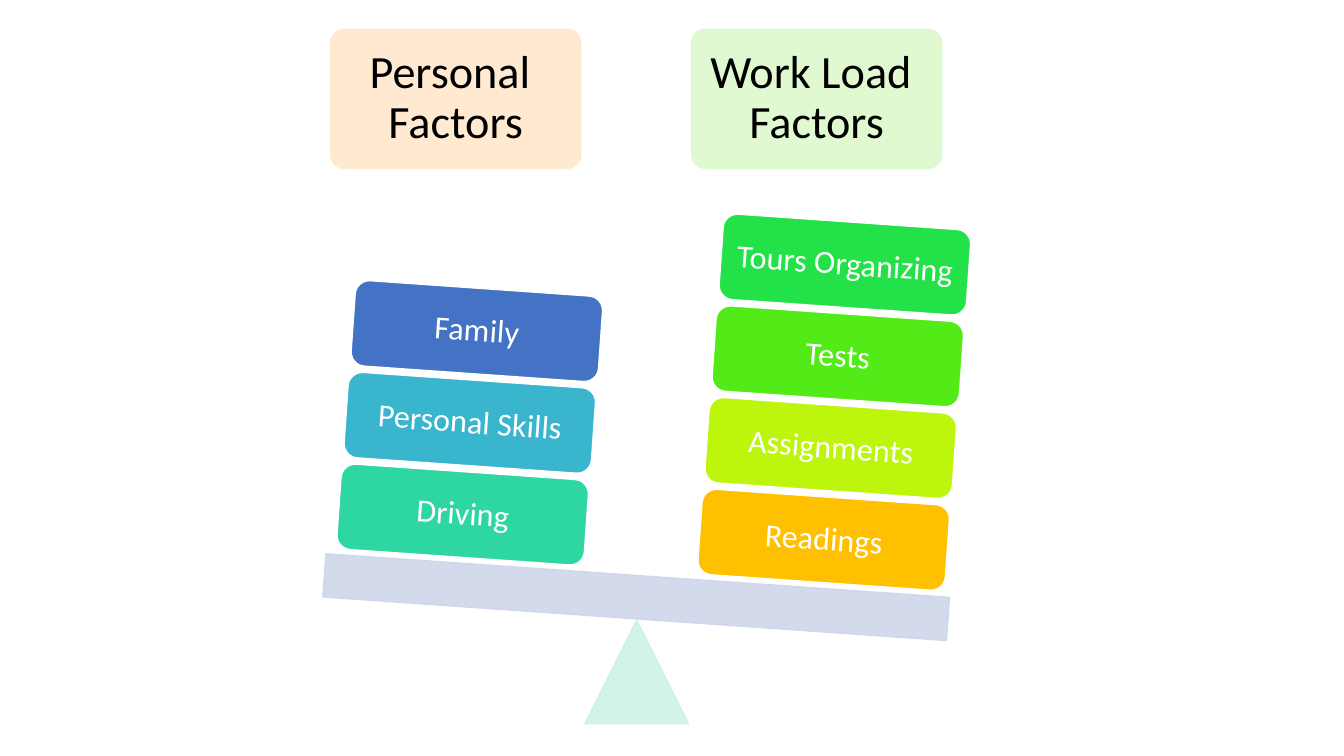
from lxml.etree import SubElement
from pptx import Presentation
from pptx.dml.color import RGBColor
from pptx.enum.shapes import MSO_SHAPE as Shape
from pptx.enum.text import MSO_ANCHOR as Anchor, PP_ALIGN as Align
from pptx.oxml.ns import qn
from pptx.util import Emu, Pt

EMU_PER_PX = 9144  # 100 px to the inch
TILT = 4
TILE_WIDTH, TILE_HEIGHT = 246, 85
TILE_PITCH, TILE_DRIFT = 91, 7

COLORS = {
    "peach": "FFE8CC",
    "pale_green": "DDF9CC",
    "mint": "CDF2E7",
    "lavender": "CFD6EA",
    "amber": "FFC000",
    "lime": "BEF50C",
    "leaf": "53EB17",
    "green": "23E148",
    "teal": "2ED7A1",
    "cyan": "39B6CE",
    "blue": "4472C4",
    "white": "FFFFFF",
    "black": "000000",
}


def px(length):
    return Emu(length * EMU_PER_PX)


def paint(fill, color, opacity):
    fill.solid()
    fill.fore_color.rgb = RGBColor.from_string(COLORS[color])
    if opacity < 100:
        for rgb in fill._xPr.iter(qn("a:srgbClr")):
            SubElement(rgb, qn("a:alpha"), val=str(opacity * 1000))


def add_box(page, kind, bounds, color, line_color, opacity=100, tilt=0):
    box = page.shapes.add_shape(kind, *map(px, bounds))
    box.shadow.inherit = False
    box.rotation = tilt
    paint(box.fill, color, opacity)
    box.line.width = Pt(1)
    paint(box.line.fill, line_color, opacity)
    return box


def write_label(box, text, size, color, inset):
    """Centre a right-to-left label in the box."""
    frame = box.text_frame
    frame.word_wrap = True
    frame.vertical_anchor = Anchor.MIDDLE
    frame.margin_left = frame.margin_right = px(inset)
    frame.margin_top = frame.margin_bottom = px(inset)
    para = frame.paragraphs[0]
    para.text = text
    para.alignment = Align.CENTER
    para.line_spacing = 0.9
    para._p.get_or_add_pPr().set("rtl", "1")
    font = para.runs[0].font
    font.name = "Calibri"
    font.size = Pt(size)
    font.color.rgb = RGBColor.from_string(COLORS[color])


def add_heading(page, left, text, color):
    box = add_box(page, Shape.ROUNDED_RECTANGLE, (left, 29, 248, 138),
                  color, color, opacity=90)
    box.adjustments[0] = 0.1
    write_label(box, text, 33, "black", inset=14)


def add_stack(page, left, top, tiles):
    """Pile tiles from the beam upwards, drifting right with the tilt."""
    for level, (text, color) in enumerate(tiles):
        bounds = (left + level * TILE_DRIFT, top - level * TILE_PITCH,
                  TILE_WIDTH, TILE_HEIGHT)
        box = add_box(page, Shape.ROUNDED_RECTANGLE, bounds, color, "white", tilt=TILT)
        write_label(box, text, 23, "white", inset=10)


def add_seesaw(page):
    add_box(page, Shape.ISOSCELES_TRIANGLE, (580, 615, 103, 103),
            "mint", "mint", opacity=90)
    add_box(page, Shape.RECTANGLE, (321, 571, 620, 43),
            "lavender", "lavender", opacity=90, tilt=TILT)


def main():
    deck = Presentation()
    deck.slide_width, deck.slide_height = px(1333), px(750)
    page = deck.slides.add_slide(deck.slide_layouts[6])

    add_heading(page, 328, " Personal Factors", "peach")
    add_heading(page, 686, " Work Load Factors", "pale_green")
    add_seesaw(page)
    add_stack(page, 694, 493, [
        ("Readings", "amber"),
        ("Assignments", "lime"),
        ("Tests", "leaf"),
        ("Tours Organizing", "green"),
    ])
    add_stack(page, 336, 468, [
        ("Driving", "teal"),
        ("Personal Skills", "cyan"),
        ("Family", "blue"),
    ])
    deck.save("out.pptx")


if __name__ == "__main__":
    main()
